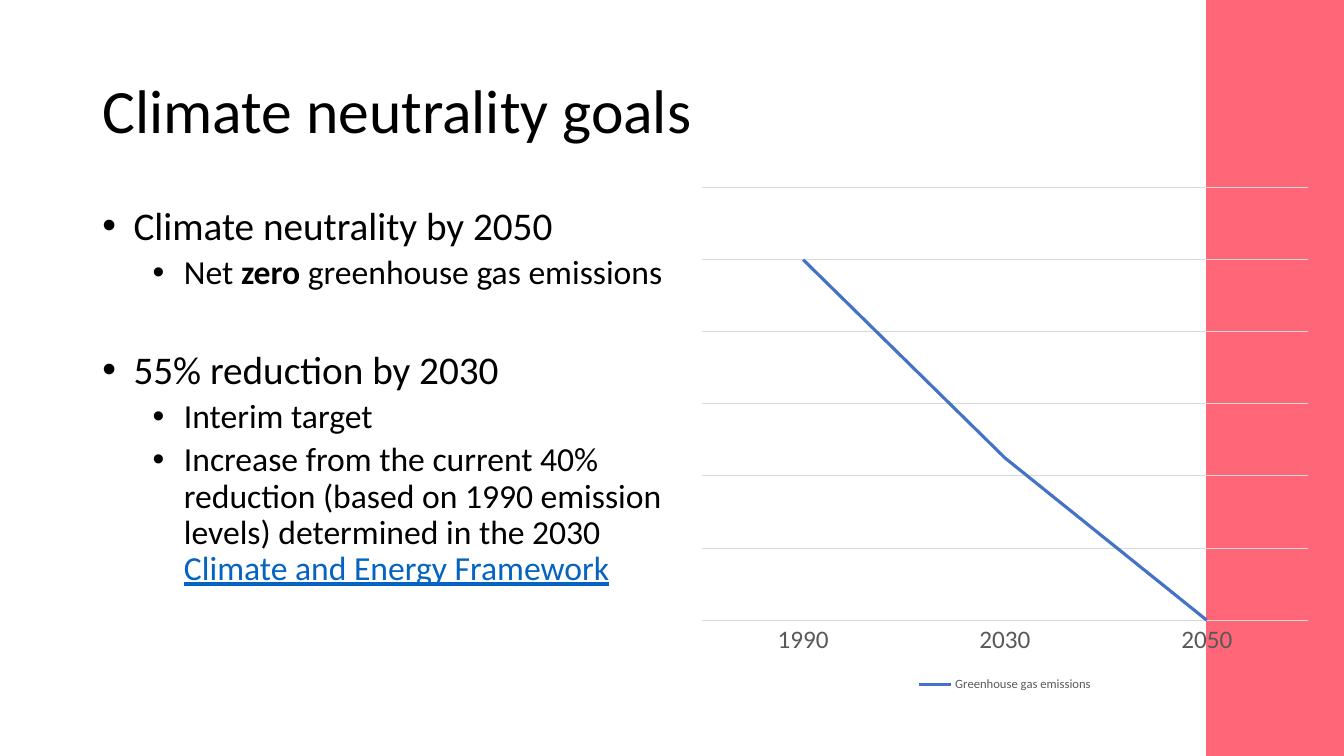
from dataclasses import dataclass
from typing import NamedTuple

from lxml.etree import SubElement
from pptx import Presentation
from pptx.chart.data import CategoryChartData
from pptx.dml.color import RGBColor
from pptx.enum.chart import XL_CHART_TYPE, XL_LEGEND_POSITION, XL_TICK_MARK
from pptx.enum.shapes import MSO_SHAPE
from pptx.enum.text import MSO_ANCHOR
from pptx.oxml.ns import qn
from pptx.util import Inches, Length, Pt

COLUMNS, ROWS = 160, 90


@dataclass(frozen=True)
class Theme:
    font: str = "Calibri"
    text: str = "000000"
    link: str = "0563C1"
    band: str = "FF6678"
    line: str = "4472C4"
    grid: str = "D9D9D9"
    label: str = "595959"
    title_size: float = 44
    level_sizes: tuple[float, ...] = (28, 24)
    axis_size: float = 18
    legend_size: float = 9


class Area(NamedTuple):
    """Left, top, width and height in grid columns and rows."""
    col: float
    row: float
    cols: float
    rows: float


class Span(NamedTuple):
    text: str
    bold: bool = False
    link: bool = False


class Point(NamedTuple):
    level: int
    spans: tuple[Span, ...]
    before: float


THEME = Theme()
TITLE_AREA = Area(11, 4.8, 138, 17.4)
BODY_AREA = Area(11, 24, 72.5, 57.1)
BAND_AREA = Area(143.6, 0, 16.4, 90)
CHART_AREA = Area(82.1, 21.1, 75.1, 61.7)
PLOT_SHARES = {"x": 0.02, "y": 0.02, "w": 0.96, "h": 0.835}
LEVEL_INDENTS = (0.31, 0.81)
HANGING = 0.31

POINTS = (
    Point(0, (Span("Climate neutrality by 2050"),), 10),
    Point(1, (Span("Net "), Span("zero", bold=True), Span(" greenhouse gas emissions")), 5),
    Point(0, (Span("55% reduction by 2030"),), 41.5),
    Point(1, (Span("Interim target"),), 5),
    Point(1, (Span("Increase from the current 40% reduction (based on 1990 emission "
                   "levels) determined in the 2030 "),
              Span("Climate and Energy Framework", link=True)), 5),
)
EMISSIONS = {"1990": 100, "2030": 45, "2050": 0}


def place(prs, area: Area) -> tuple[Length, ...]:
    """Turn a grid area into slide lengths."""
    col, row = prs.slide_width / COLUMNS, prs.slide_height / ROWS
    return tuple(Length(round(n * unit)) for n, unit in zip(area, (col, row, col, row)))


def style_font(font, size: float, color: str, bold: bool = False, underline: bool = False) -> None:
    font.name = THEME.font
    font.size = Pt(size)
    font.bold = bold
    font.underline = underline
    font.color.rgb = RGBColor.from_string(color)


def add_text(p, text: str, *, size: float, color: str = THEME.text,
             bold: bool = False, underline: bool = False) -> None:
    r = p.add_run()
    r.text = text
    style_font(r.font, size, color, bold, underline)


def add_frame(prs, s, area: Area, anchor: MSO_ANCHOR):
    tf = s.shapes.add_textbox(*place(prs, area)).text_frame
    tf.word_wrap = True
    tf.vertical_anchor = anchor
    return tf


def set_bullet(p, level: int) -> None:
    p.level = level
    pPr = p._p.get_or_add_pPr()
    pPr.set("marL", str(Inches(LEVEL_INDENTS[level])))
    pPr.set("indent", str(-Inches(HANGING)))
    SubElement(pPr, qn("a:buFont")).set("typeface", "Arial")
    SubElement(pPr, qn("a:buChar")).set("char", "•")


def add_title(prs, s) -> None:
    p = add_frame(prs, s, TITLE_AREA, MSO_ANCHOR.MIDDLE).paragraphs[0]
    p.line_spacing = 0.9
    add_text(p, "Climate neutrality goals", size=THEME.title_size)


def add_points(prs, s) -> None:
    tf = add_frame(prs, s, BODY_AREA, MSO_ANCHOR.TOP)
    for i, point in enumerate(POINTS):
        p = tf.add_paragraph() if i else tf.paragraphs[0]
        p.line_spacing = 0.9
        p.space_before = Pt(point.before)
        set_bullet(p, point.level)
        for span in point.spans:
            add_text(p, span.text, size=THEME.level_sizes[point.level], bold=span.bold,
                     color=THEME.link if span.link else THEME.text, underline=span.link)


def add_band(prs, s) -> None:
    sp = s.shapes.add_shape(MSO_SHAPE.RECTANGLE, *place(prs, BAND_AREA))
    sp.shadow.inherit = False
    sp.fill.solid()
    sp.fill.fore_color.rgb = RGBColor.from_string(THEME.band)
    sp.line.fill.background()


def style_line(line, color: str, width: float) -> None:
    line.color.rgb = RGBColor.from_string(color)
    line.width = Pt(width)


def set_plot_layout(chart) -> None:
    """Fix the inner plot area at its shares of the chart."""
    plot_area = chart._chartSpace.chart.plotArea
    layout = plot_area.find(qn("c:layout"))
    if layout is None:
        layout = SubElement(plot_area, qn("c:layout"))
        plot_area.insert(0, layout)
    manual = SubElement(layout, qn("c:manualLayout"))
    settings = {"layoutTarget": "inner", "xMode": "edge", "yMode": "edge", **PLOT_SHARES}
    for tag, value in settings.items():
        SubElement(manual, qn(f"c:{tag}")).set("val", str(value))


def add_emissions_chart(prs, s) -> None:
    data = CategoryChartData()
    data.categories = list(EMISSIONS)
    data.add_series("Greenhouse gas emissions", list(EMISSIONS.values()))
    chart = s.shapes.add_chart(XL_CHART_TYPE.LINE, *place(prs, CHART_AREA), data).chart
    chart.has_title = False
    style_font(chart.font, 10, THEME.text)
    set_plot_layout(chart)

    chart.plots[0].vary_by_categories = False
    series = chart.plots[0].series[0]
    series.smooth = False
    style_line(series.format.line, THEME.line, 2.25)

    years = chart.category_axis
    years.major_tick_mark = XL_TICK_MARK.NONE
    style_font(years.tick_labels.font, THEME.axis_size, THEME.label)
    style_line(years.format.line, THEME.grid, 0.75)

    values = chart.value_axis
    values.minimum_scale, values.maximum_scale, values.major_unit = 0, 120, 20
    values.has_major_gridlines = True
    style_line(values.major_gridlines.format.line, THEME.grid, 0.75)
    values.visible = False

    chart.has_legend = True
    chart.legend.position = XL_LEGEND_POSITION.BOTTOM
    chart.legend.include_in_layout = False
    style_font(chart.legend.font, THEME.legend_size, THEME.label)


def main() -> None:
    prs = Presentation()
    prs.slide_width, prs.slide_height = Inches(13.33), Inches(7.5)
    s = prs.slides.add_slide(prs.slide_layouts[6])
    for add in (add_title, add_points, add_band, add_emissions_chart):
        add(prs, s)
    prs.save("out.pptx")


if __name__ == "__main__":
    main()
